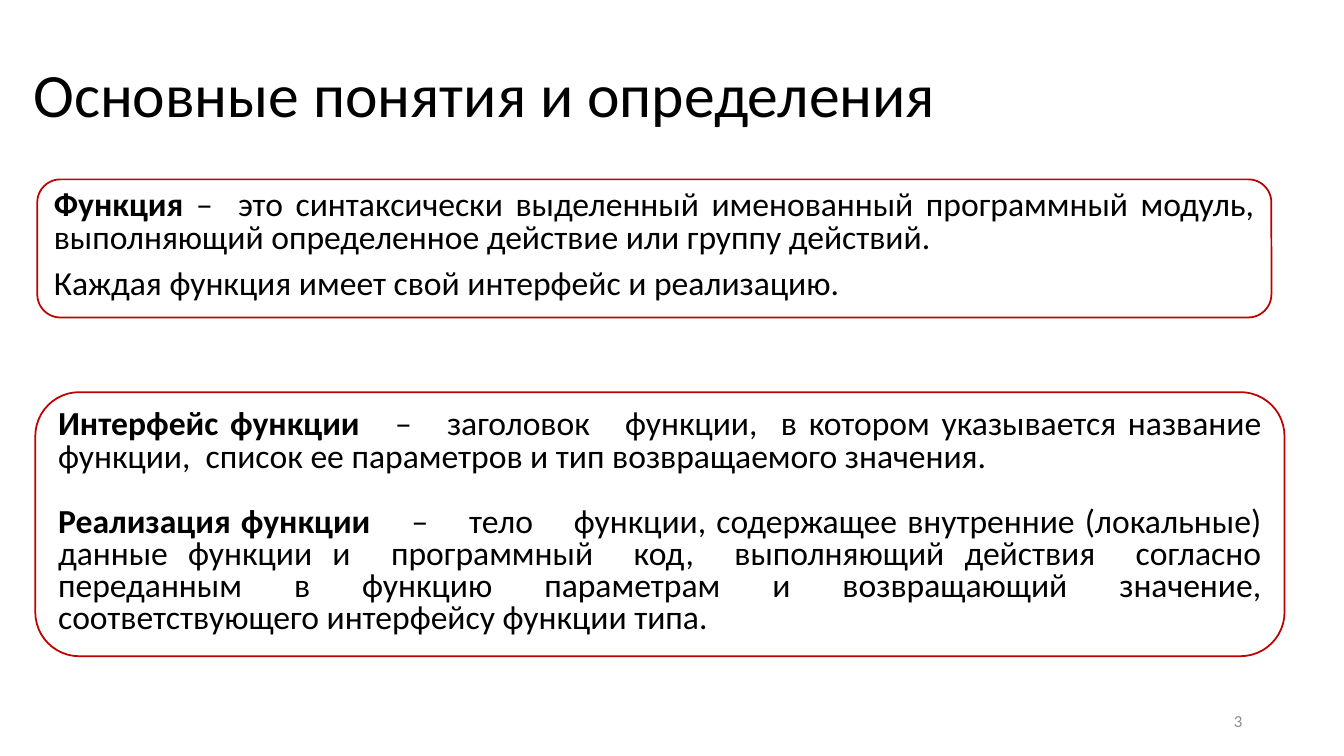
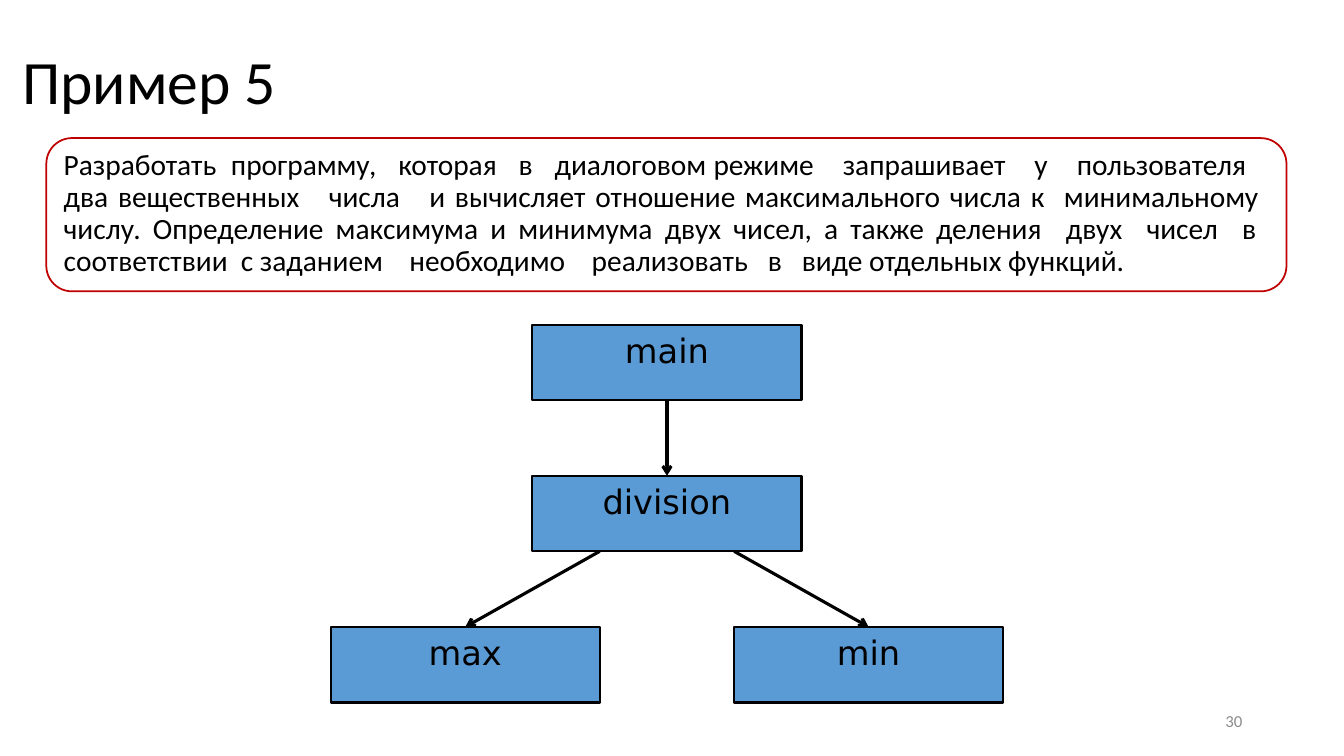
from lxml import etree
from pptx import Presentation
from pptx.dml.color import RGBColor
from pptx.enum.shapes import MSO_CONNECTOR, MSO_SHAPE
from pptx.enum.text import MSO_ANCHOR, MSO_AUTO_SIZE, PP_ALIGN
from pptx.oxml.ns import qn
from pptx.util import Inches, Pt

LEFT, CENTER, RIGHT, JUSTIFY = PP_ALIGN.LEFT, PP_ALIGN.CENTER, PP_ALIGN.RIGHT, PP_ALIGN.JUSTIFY
TOP, MIDDLE = MSO_ANCHOR.TOP, MSO_ANCHOR.MIDDLE
NO_AUTOFIT = MSO_AUTO_SIZE.NONE
RECTANGLE, ROUNDED = MSO_SHAPE.RECTANGLE, MSO_SHAPE.ROUNDED_RECTANGLE
STRAIGHT = MSO_CONNECTOR.STRAIGHT
TITLE_ONLY = 5
SIDE_TOP, SIDE_BOTTOM = 0, 2

COLORS = {"text": "000000", "frame": "C00000", "node": "5B9BD5", "number": "8C8C8C"}
TEXT_FONT, NODE_FONT = "Calibri", "DejaVu Sans"
NODE_WIDTH, NODE_HEIGHT = 2.67, 0.75


def color(name):
    return RGBColor.from_string(COLORS[name])


def add_run(paragraph, text, size, font=TEXT_FONT, color_name="text", bold=False):
    run = paragraph.add_run()
    run.text = text
    run.font.name = font
    run.font.size = Pt(size)
    run.font.bold = bold
    run.font.color.rgb = color(color_name)


def set_frame(shape, anchor):
    frame = shape.text_frame
    frame.word_wrap = True
    frame.auto_size = NO_AUTOFIT
    frame.vertical_anchor = anchor
    return frame


def add_titled_slide(presentation, title, left, top, number):
    slide = presentation.slides.add_slide(presentation.slide_layouts[TITLE_ONLY])
    shape = slide.shapes.title
    shape.left, shape.top = Inches(left), Inches(top)
    shape.width, shape.height = Inches(11.5), Inches(1.45)
    paragraph = set_frame(shape, MIDDLE).paragraphs[0]
    paragraph.alignment = LEFT
    paragraph.line_spacing = 0.9
    add_run(paragraph, title, 44)

    box = slide.shapes.add_textbox(Inches(9.42), Inches(6.95), Inches(3), Inches(0.4))
    paragraph = set_frame(box, MIDDLE).paragraphs[0]
    paragraph.alignment = RIGHT
    add_run(paragraph, str(number), 12, color_name="number")
    return slide


def add_outlined_shape(slide, kind, position, line_color, line_width):
    shape = slide.shapes.add_shape(kind, *map(Inches, position))
    shape.shadow.inherit = False
    shape.line.color.rgb = color(line_color)
    shape.line.width = Pt(line_width)
    return shape


def add_definition_box(slide, position, paragraphs, size, line_spacing):
    """Each paragraph is (term in bold, explanation, space before in points)."""
    shape = add_outlined_shape(slide, ROUNDED, position, "frame", 1.25)
    shape.fill.background()
    frame = set_frame(shape, TOP)
    for index, (term, explanation, space_before) in enumerate(paragraphs):
        paragraph = frame.add_paragraph() if index else frame.paragraphs[0]
        paragraph.alignment = JUSTIFY
        paragraph.line_spacing = line_spacing
        paragraph.space_before = Pt(space_before)
        if term:
            add_run(paragraph, term, size, bold=True)
        add_run(paragraph, explanation, size)


def add_node(slide, name, left, top):
    position = (left, top, NODE_WIDTH, NODE_HEIGHT)
    shape = add_outlined_shape(slide, RECTANGLE, position, "text", 1.5)
    shape.fill.solid()
    shape.fill.fore_color.rgb = color("node")
    paragraph = set_frame(shape, TOP).paragraphs[0]
    paragraph.alignment = CENTER
    add_run(paragraph, name, 24, font=NODE_FONT)
    return shape


def add_call_arrow(slide, caller, called, fraction=0.5):
    """Arrow from a fraction of the caller's bottom side to the top of the called node."""
    start_x = caller.left + int(caller.width * fraction)
    start_y = caller.top + caller.height
    arrow = slide.shapes.add_connector(
        STRAIGHT, start_x, start_y, called.left + called.width // 2, called.top)
    if fraction == 0.5:
        arrow.begin_connect(caller, SIDE_BOTTOM)
    arrow.end_connect(called, SIDE_TOP)
    arrow.line.color.rgb = color("text")
    arrow.line.width = Pt(2.25)
    etree.SubElement(arrow.line._get_or_add_ln(), qn("a:tailEnd"), type="arrow")
    etree.SubElement(arrow._element.spPr, qn("a:effectLst"))


def build_definitions(presentation):
    slide = add_titled_slide(presentation, "Основные понятия и определения", 0.23, 0.24, 3)
    add_definition_box(slide, (0.37, 1.78, 12.24, 1.37), [
        ("Функция ", "–  это синтаксически выделенный именованный программный модуль, "
         "выполняющий определенное действие или группу действий.", 10),
        ("", "Каждая функция имеет свой интерфейс и реализацию.", 10),
    ], 24, 0.8)
    add_definition_box(slide, (0.35, 3.89, 12.39, 2.62), [
        ("Интерфейс функции", "   –   заголовок   функции,  в котором указывается название "
         "функции,  список ее параметров и тип возвращаемого значения.", 0),
        ("Реализация функции   ", " –    тело    функции, содержащее внутренние (локальные) "
         "данные функции и  программный  код,  выполняющий действия  согласно переданным "
         "в функцию параметрам и возвращающий значение, соответствующего интерфейсу "
         "функции типа.", 23.4),
    ], 24, 0.8)


def build_example(presentation):
    slide = add_titled_slide(presentation, "Пример 5", 0.12, 0.11, 30)
    add_definition_box(slide, (0.46, 1.37, 12.3, 1.52), [
        ("", "Разработать  программу,   которая   в   диалоговом режиме    запрашивает    у    "
         "пользователя    два вещественных   числа   и вычисляет отношение максимального "
         "числа к  минимальному  числу. Определение максимума и минимума двух чисел, "
         "а также деления  двух  чисел  в  соответствии  с заданием    необходимо    "
         "реализовать   в   виде отдельных функций.", 10),
    ], 21, 0.9)

    center_left, first_top, column_step, row_step = 5.28, 3.22, 2, 1.5
    main_node, division_node, max_node, min_node = [
        add_node(slide, name, center_left + column * column_step, first_top + row * row_step)
        for name, column, row in
        [("main", 0, 0), ("division", 0, 1), ("max", -1, 2), ("min", 1, 2)]
    ]
    add_call_arrow(slide, main_node, division_node)
    add_call_arrow(slide, division_node, max_node, 0.25)
    add_call_arrow(slide, division_node, min_node, 0.75)


def main():
    presentation = Presentation()
    presentation.slide_width, presentation.slide_height = Inches(13.33), Inches(7.5)
    build_definitions(presentation)
    build_example(presentation)
    presentation.save("out.pptx")


if __name__ == "__main__":
    main()
